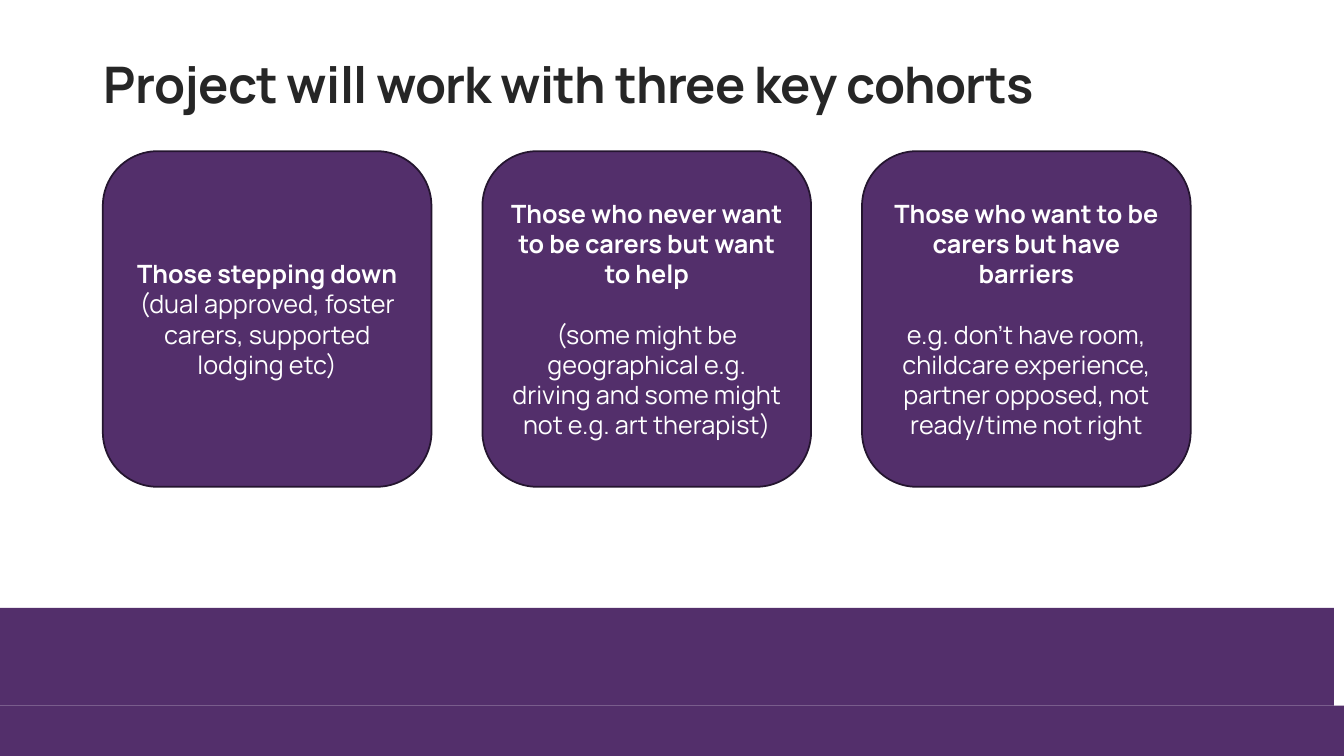
from dataclasses import dataclass

from pptx import Presentation
from pptx.dml.color import RGBColor as RGB
from pptx.enum.shapes import MSO_SHAPE as SHAPE
from pptx.enum.text import MSO_ANCHOR as ANCHOR, MSO_AUTO_SIZE as FIT, PP_ALIGN as ALIGN
from pptx.util import Inches, Pt


@dataclass(frozen=True)
class Theme:
    font: str = "Manrope"
    fill: RGB = RGB(0x53, 0x2F, 0x6B)
    edge: RGB = RGB(0x24, 0x15, 0x2F)
    ink: RGB = RGB(0x26, 0x26, 0x26)
    light: RGB = RGB(0xFF, 0xFF, 0xFF)
    head: Pt = Pt(36)
    body: Pt = Pt(18)
    gap: Pt = Pt(21.6)


THEME = Theme()

# Each card is a list of paragraphs, each paragraph a list of (text, bold)
CARDS = [
    [[("Those stepping down ", True),
      ("(dual approved, foster carers, supported lodging etc)", False)]],
    [[("Those who never want to be carers but want to help", True)],
     [("(some might be geographical e.g. driving and some might not "
       "e.g. art therapist)", False)]],
    [[("Those who want to be carers but have barriers", True)],
     [("e.g. don’t have room, childcare experience, partner opposed, "
       "not ready/time not right", False)]],
]


def style(obj, form):
    for key, val in form.items():
        setattr(obj, key, val)


def write(para, text, size, color, bold):
    run = para.add_run()
    run.text = text
    style(run.font, {"name": THEME.font, "size": size, "bold": bold})
    run.font.color.rgb = color
    return run


def block(slide, kind, box):
    shape = slide.shapes.add_shape(kind, *map(Inches, box))
    shape.shadow.inherit = False
    shape.fill.solid()
    shape.fill.fore_color.rgb = THEME.fill
    shape.line.fill.background()
    return shape


def bands(slide, box):
    left, top, width, height = box
    low = 0.5
    block(slide, SHAPE.RECTANGLE, (left, top + height - low, width, low))
    block(slide, SHAPE.RECTANGLE, (left, top, width - 0.1, height - low))


def title(slide, box, text):
    left, top, width, height = map(Inches, box)
    head = slide.shapes.title
    style(head, {"left": left, "top": top, "width": width, "height": height})
    style(head.text_frame, {"word_wrap": True, "auto_size": FIT.NONE,
                            "vertical_anchor": ANCHOR.BOTTOM})
    para = head.text_frame.paragraphs[0]
    style(para, {"alignment": ALIGN.LEFT, "line_spacing": 0.85})
    run = write(para, text, THEME.head, THEME.ink, True)
    run.font._element.set("spc", "-50")


def card(slide, box, paras):
    shape = block(slide, SHAPE.ROUNDED_RECTANGLE, box)
    shape.line.color.rgb = THEME.edge
    shape.line.width = Pt(1.25)
    frame = shape.text_frame
    style(frame, {"word_wrap": True, "vertical_anchor": ANCHOR.MIDDLE})
    for i, runs in enumerate(paras):
        para = frame.add_paragraph() if i else frame.paragraphs[0]
        para.alignment = ALIGN.CENTER
        if i:
            para.space_before = THEME.gap
        for text, bold in runs:
            write(para, text, THEME.body, THEME.light, bold)


def cards(slide, box, items):
    left, top, width, height = box
    wide = 3.26
    step = (width - wide) / (len(items) - 1)
    for i, paras in enumerate(items):
        card(slide, (left + i * step, top, wide, height), paras)


def main():
    deck = Presentation()
    deck.slide_width, deck.slide_height = Inches(13.33), Inches(7.5)
    slide = deck.slides.add_slide(deck.slide_layouts[5])

    # Footer bands, cohort cards, heading
    bands(slide, (0, 6.03, 13.33, 1.47))
    cards(slide, (1.02, 1.5, 10.79, 3.33), CARDS)
    title(slide, (0.93, 0.21, 9.73, 0.97), "Project will work with three key cohorts")

    deck.save("out.pptx")


if __name__ == "__main__":
    main()
